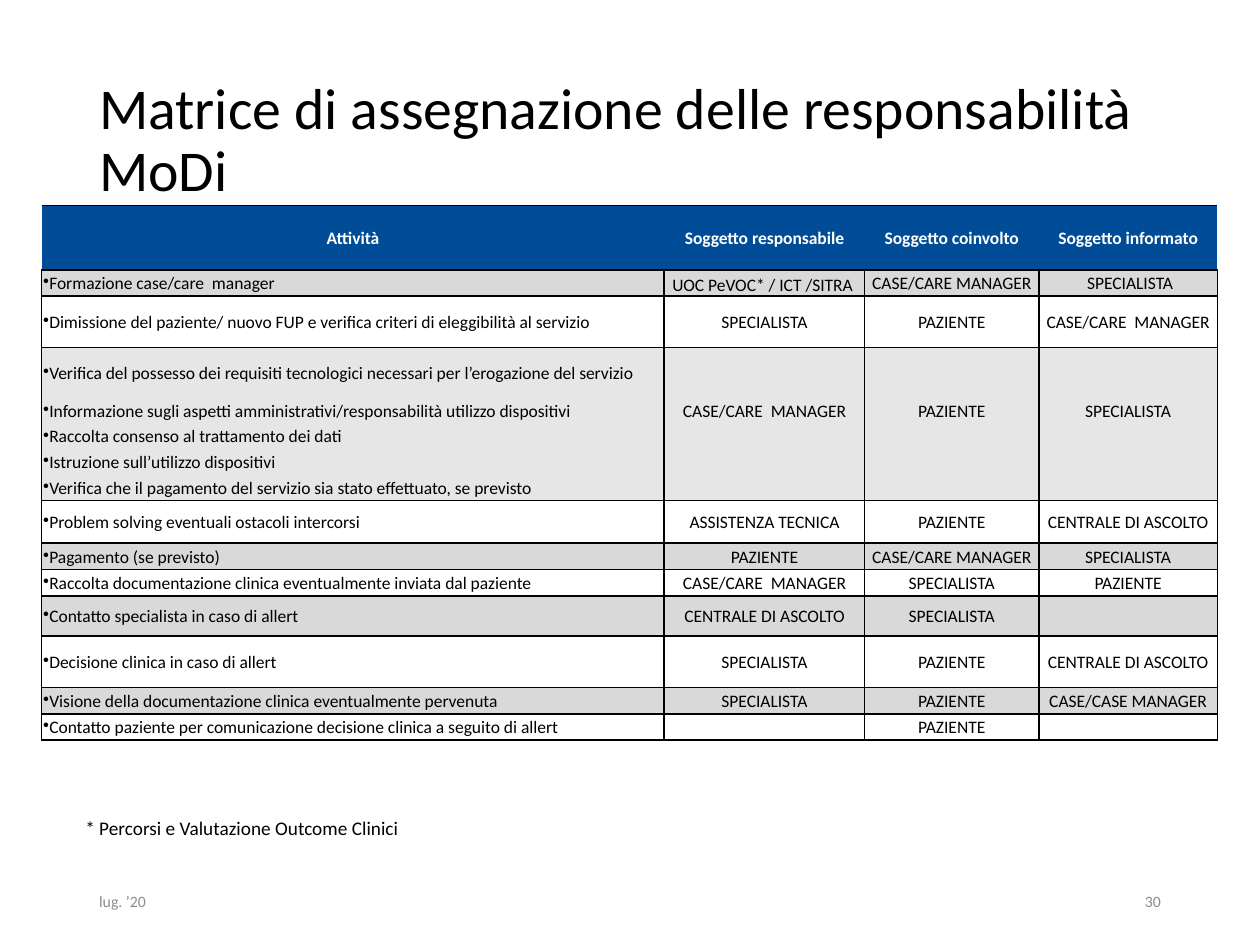
"""Build the responsibility assignment matrix slide for the MoDi service."""
from lxml.etree import SubElement
from pptx import Presentation
from pptx.dml.color import RGBColor
from pptx.enum.text import MSO_ANCHOR, PP_ALIGN
from pptx.oxml.ns import qn
from pptx.util import Cm, Pt

BLACK = RGBColor(0x00, 0x00, 0x00)
WHITE = RGBColor(0xFF, 0xFF, 0xFF)
BLUE = RGBColor(0x00, 0x4C, 0x97)
GREY = RGBColor(0xD9, 0xD9, 0xD9)
LIGHT_GREY = RGBColor(0xE7, 0xE6, 0xE6)
FOOTER_GREY = RGBColor(0x8C, 0x8C, 0x8C)


def write(frame, text, size=10, color=BLACK, bold=False, align=PP_ALIGN.LEFT,
          line_spacing=None, space_after=None, bullet=False):
    paragraph = frame.paragraphs[0]
    paragraph.alignment = align
    paragraph.line_spacing = line_spacing
    paragraph.space_after = space_after
    if bullet:
        properties = paragraph._p.get_or_add_pPr()
        bullet_color = SubElement(properties, qn("a:buClr"))
        SubElement(bullet_color, qn("a:srgbClr"), val=str(color))
        SubElement(properties, qn("a:buChar"), char="•")
    if text:
        run = paragraph.add_run()
        run.text = text
        run.font.name = "Calibri"
        run.font.size = Pt(size)
        run.font.bold = bold
        run.font.color.rgb = color
    else:
        SubElement(paragraph._p, qn("a:endParaRPr"), sz=str(size * 100))


def set_borders(cell, visible):
    properties = cell._tc.get_or_add_tcPr()
    for side in "LRTB":
        line = SubElement(properties, qn(f"a:ln{side}"), w=str(Pt(1)))
        if side in visible:
            fill = SubElement(line, qn("a:solidFill"))
            SubElement(fill, qn("a:srgbClr"), val=str(BLACK))
        else:
            SubElement(line, qn("a:noFill"))


presentation = Presentation()
presentation.slide_width = Cm(25.4)
presentation.slide_height = Cm(19.05)
slide = presentation.slides.add_slide(presentation.slide_layouts[6])

MIDDLE, TOP = MSO_ANCHOR.MIDDLE, MSO_ANCHOR.TOP
texts = [
    ("Matrice di assegnazione delle responsabilità MoDi", (1.75, 1.02, 21.9, 3.68), MIDDLE,
     dict(size=33, line_spacing=0.9)),
    ("lug. ’20", (1.75, 17.65, 5.72, 1.02), MIDDLE, dict(size=9, color=FOOTER_GREY)),
    ("30", (17.93, 17.65, 5.72, 1.02), MIDDLE,
     dict(size=9, color=FOOTER_GREY, align=PP_ALIGN.RIGHT)),
    ("* Percorsi e Valutazione Outcome Clinici", (1.47, 16.33, 12.34, 0.91), TOP,
     dict(size=11)),
]
for text, place, anchor, style in texts:
    frame = slide.shapes.add_textbox(*map(Cm, place)).text_frame
    frame.word_wrap = True
    frame.vertical_anchor = anchor
    write(frame, text, **style)

activities = [
    (1.3, BLUE, "TB", "Attività", "Soggetto responsabile", "Soggetto coinvolto",
     "Soggetto informato"),
    (0.53, GREY, "LRTB", "Formazione case/care  manager", "UOC PeVOC* / ICT /SITRA ",
     "CASE/CARE MANAGER", " SPECIALISTA"),
    (1.04, WHITE, "LRTB",
     "Dimissione del paziente/ nuovo FUP e verifica criteri di eleggibilità al servizio",
     "SPECIALISTA", "PAZIENTE", "CASE/CARE  MANAGER"),
    (1.02, LIGHT_GREY, "LRT",
     "Verifica del possesso dei requisiti tecnologici necessari per l’erogazione del servizio",
     "", "", ""),
    (0.51, LIGHT_GREY, "LR",
     "Informazione sugli aspetti amministrativi/responsabilità utilizzo dispositivi",
     "CASE/CARE  MANAGER", "PAZIENTE", "SPECIALISTA"),
    (0.51, LIGHT_GREY, "LR", "Raccolta consenso al trattamento dei dati ", "", "", ""),
    (0.51, LIGHT_GREY, "LR", "Istruzione sull’utilizzo dispositivi", "", "", ""),
    (0.53, LIGHT_GREY, "LRB",
     "Verifica che il pagamento del servizio sia stato effettuato, se previsto ", "", "", ""),
    (0.86, WHITE, "LRTB", "Problem solving eventuali ostacoli intercorsi ",
     "ASSISTENZA TECNICA", "PAZIENTE", "CENTRALE DI ASCOLTO"),
    (0.53, GREY, "LRTB", "Pagamento (se previsto)", "PAZIENTE", "CASE/CARE MANAGER",
     "SPECIALISTA"),
    (0.53, WHITE, "LRTB", "Raccolta documentazione clinica eventualmente inviata dal paziente",
     "CASE/CARE  MANAGER", "SPECIALISTA", "PAZIENTE"),
    (0.81, GREY, "LRTB", "Contatto specialista in caso di allert", "CENTRALE DI ASCOLTO",
     "SPECIALISTA", ""),
    (1.04, WHITE, "LRTB", "Decisione clinica in caso di allert", "SPECIALISTA", "PAZIENTE",
     "CENTRALE DI ASCOLTO"),
    (0.53, GREY, "LRTB", "Visione della documentazione clinica eventualmente pervenuta",
     "SPECIALISTA", "PAZIENTE", "CASE/CASE MANAGER"),
    (0.53, WHITE, "LRTB",
     "Contatto paziente per comunicazione decisione clinica a seguito di allert",
     "", "PAZIENTE", ""),
]
column_widths = [12.55, 4.04, 3.51, 3.6]
matrix = slide.shapes.add_table(len(activities), len(column_widths), Cm(0.84), Cm(4.14),
                                Cm(sum(column_widths)), Cm(10.8)).table
matrix.first_row = matrix.horz_banding = False
for column, width in zip(matrix.columns, column_widths):
    column.width = Cm(width)

for row, (height, fill, borders, *entries) in enumerate(activities):
    matrix.rows[row].height = Cm(height)
    for column, entry in enumerate(entries):
        cell = matrix.cell(row, column)
        cell.margin_left = cell.margin_right = cell.margin_top = Cm(0.03)
        cell.margin_bottom = 0
        cell.vertical_anchor = MIDDLE
        set_borders(cell, borders)
        cell.fill.solid()
        cell.fill.fore_color.rgb = fill
        style = dict(align=PP_ALIGN.CENTER)
        if row == 0:
            style.update(color=WHITE, bold=True)
        elif column == 0:
            style.update(align=PP_ALIGN.JUSTIFY, bullet=True)
        elif entry.startswith("UOC"):
            style.update(line_spacing=Pt(14), space_after=Pt(6))
        write(cell.text_frame, entry, **style)

presentation.save("out.pptx")
